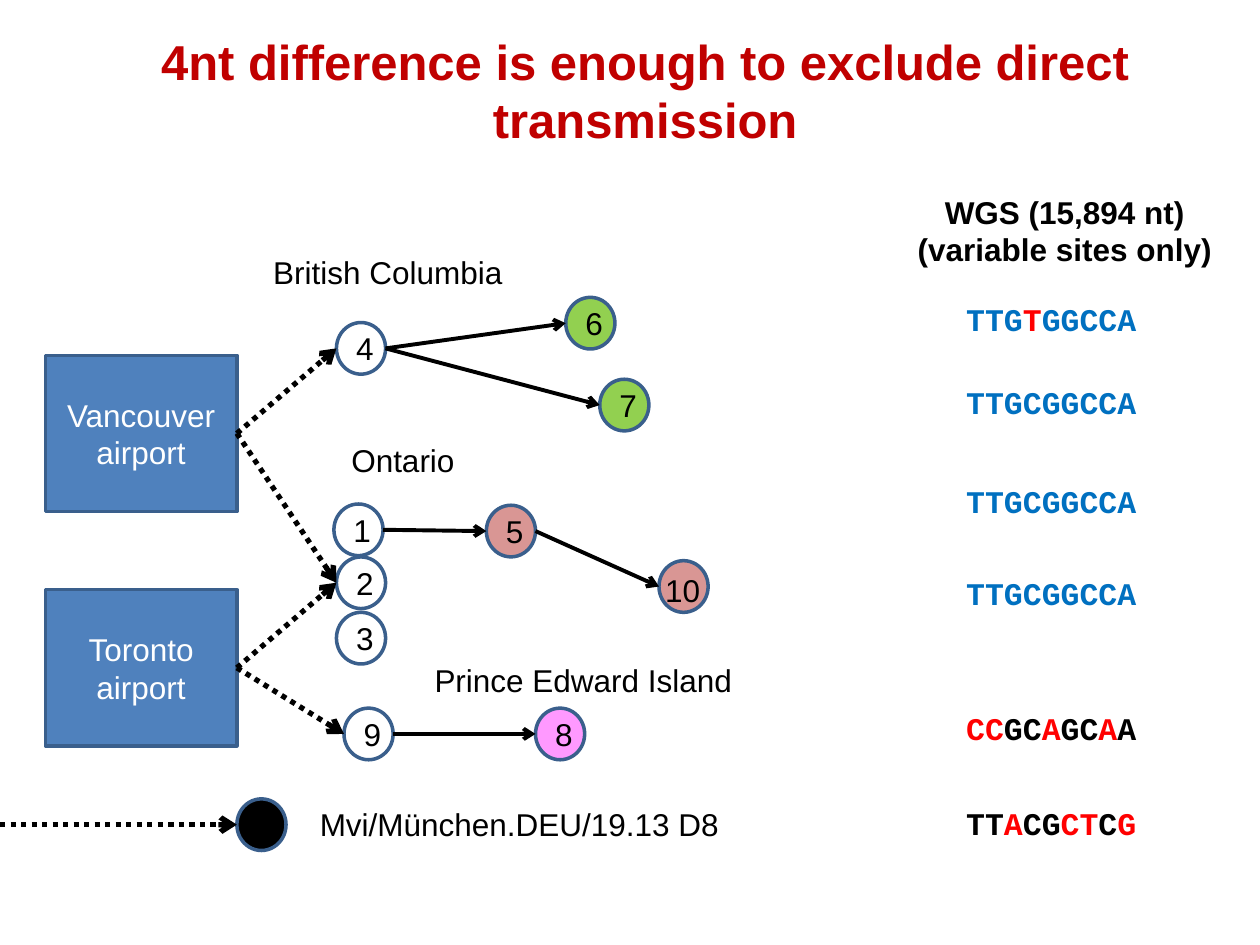
from lxml.etree import SubElement
from pptx import Presentation
from pptx.dml.color import RGBColor
from pptx.enum.dml import MSO_LINE
from pptx.enum.shapes import MSO_CONNECTOR, MSO_SHAPE
from pptx.enum.text import MSO_ANCHOR, PP_ALIGN
from pptx.oxml.ns import qn
from pptx.util import Inches, Pt

BLACK = RGBColor(0x00, 0x00, 0x00)
WHITE = RGBColor(0xFF, 0xFF, 0xFF)
CRIMSON = RGBColor(0xC0, 0x00, 0x00)
RED = RGBColor(0xFF, 0x00, 0x00)
BLUE = RGBColor(0x00, 0x70, 0xC0)
STEEL = RGBColor(0x4F, 0x81, 0xBD)
OUTLINE = RGBColor(0x3A, 0x5F, 0x8C)
GREEN = RGBColor(0x92, 0xD0, 0x50)
ROSE = RGBColor(0xD9, 0x96, 0x94)
PINK = RGBColor(0xFF, 0x99, 0xFF)

TITLE = "4nt difference is enough to exclude direct transmission"
SEQUENCE_HEADING = ["WGS (15,894 nt)", "(variable sites only)"]

AIRPORT_SIZE = (1.52, 1.24)
AIRPORTS = {
    "Vancouver airport": (0.36, 2.82),
    "Toronto airport": (0.36, 4.68),
}

CASE_SIZE = (0.39, 0.41)
REFERENCE = "reference"
CASES = {
    "1": (2.65, 4.0, WHITE),
    "2": (2.67, 4.42, WHITE),
    "3": (2.67, 4.86, WHITE),
    "5": (3.86, 4.01, ROSE),
    "10": (5.23, 4.45, ROSE),
    "4": (2.67, 2.56, WHITE),
    "6": (4.49, 2.36, GREEN),
    "7": (4.76, 3.01, GREEN),
    "9": (2.73, 5.62, WHITE),
    "8": (4.25, 5.62, PINK),
    REFERENCE: (1.88, 6.34, BLACK),
}
UNLABELLED_CASES = {"10", REFERENCE}

IMPORTATIONS = [
    ("Vancouver airport", "2"),
    ("Toronto airport", "2"),
    ("Toronto airport", "9"),
    ("Vancouver airport", "4"),
]
TRANSMISSIONS = [("9", "8"), ("1", "5"), ("5", "10"), ("4", "6"), ("4", "7")]

LABELS = [
    ("British Columbia", 2.07, 1.96, 2.04),
    ("Ontario", 2.69, 3.45, 1.03),
    ("Prince Edward Island", 3.35, 5.2, 2.59),
    ("Mvi/München.DEU/19.13 D8", 2.44, 6.34, 3.4),
    ("10", 5.18, 4.48, 0.48),
]

SEQUENCES = [
    (2.33, [("TTG", BLUE), ("T", RED), ("GGCCA", BLUE)]),
    (2.99, [("TTGCGGCCA", BLUE)]),
    (3.78, [("TTGCGGCCA", BLUE)]),
    (4.51, [("TTGCGGCCA", BLUE)]),
    (5.58, [("CC", RED), ("GC", BLACK), ("A", RED), ("GC", BLACK),
            ("A", RED), ("A", BLACK)]),
    (6.33, [("TT", BLACK), ("A", RED), ("CG", BLACK), ("CT", RED),
            ("C", BLACK), ("G", RED)]),
]


def set_font(font, color=None, size=18, name="Arial", bold=False):
    font.name, font.size, font.bold = name, Pt(size), bold
    if color is not None:
        font.color.rgb = color


def add_text(slide, lines, box, color=BLACK, wrap=False, align=PP_ALIGN.LEFT,
             anchor=MSO_ANCHOR.TOP, **style):
    frame = slide.shapes.add_textbox(*map(Inches, box)).text_frame
    frame.word_wrap, frame.vertical_anchor = wrap, anchor
    frame.text = "\n".join(lines)
    for paragraph in frame.paragraphs:
        paragraph.alignment = align
        set_font(paragraph.font, color, **style)


def add_sequence(slide, top, pieces):
    box = slide.shapes.add_textbox(*map(Inches, (7.57, top, 1.56, 0.4)))
    box.text_frame.word_wrap = False
    paragraph = box.text_frame.paragraphs[0]
    set_font(paragraph.font, name="Courier New", bold=True)
    for bases, color in pieces:
        run = paragraph.add_run()
        run.text = bases
        run.font.color.rgb = color


def add_node(slide, preset, box, fill, label="", color=BLACK):
    node = slide.shapes.add_shape(preset, *map(Inches, box))
    node.shadow.inherit = False
    node.fill.solid()
    node.fill.fore_color.rgb = fill
    node.line.color.rgb = OUTLINE
    node.line.width = Pt(2)
    if label:
        node.text_frame.text = label
        node.text_frame.vertical_anchor = MSO_ANCHOR.MIDDLE
        paragraph = node.text_frame.paragraphs[0]
        paragraph.alignment = PP_ALIGN.CENTER
        set_font(paragraph.font, color)
    return node


def left_side(node):
    return node.left, node.top + node.height // 2


def right_side(node):
    return node.left + node.width, node.top + node.height // 2


def add_arrow(slide, start, end, width, dash=None):
    arrow = slide.shapes.add_connector(MSO_CONNECTOR.STRAIGHT, *start, *end)
    arrow.line.color.rgb = BLACK
    arrow.line.width = Pt(width)
    if dash is not None:
        arrow.line.dash_style = dash
    SubElement(arrow.line._get_or_add_ln(), qn("a:tailEnd"), type="arrow")
    SubElement(arrow._element.spPr, qn("a:effectLst"))


def main():
    deck = Presentation()
    deck.slide_width, deck.slide_height = Inches(10), Inches(7.5)
    slide = deck.slides.add_slide(deck.slide_layouts[6])

    add_text(slide, [TITLE], (0.25, 0.5, 9.74, 0.73), CRIMSON, wrap=True,
             align=PP_ALIGN.CENTER, anchor=MSO_ANCHOR.BOTTOM, size=28, bold=True)

    nodes = {}
    for name, (left, top, fill) in CASES.items():
        label = "" if name in UNLABELLED_CASES else name
        nodes[name] = add_node(slide, MSO_SHAPE.OVAL, (left, top, *CASE_SIZE),
                               fill, label)
    for name, corner in AIRPORTS.items():
        nodes[name] = add_node(slide, MSO_SHAPE.RECTANGLE,
                               (*corner, *AIRPORT_SIZE), STEEL, name, WHITE)

    for source, target in IMPORTATIONS:
        add_arrow(slide, right_side(nodes[source]), left_side(nodes[target]),
                  3, MSO_LINE.ROUND_DOT)
    for source, target in TRANSMISSIONS:
        add_arrow(slide, right_side(nodes[source]), left_side(nodes[target]), 2.25)
    entry = left_side(nodes[REFERENCE])
    add_arrow(slide, (0, entry[1]), entry, 3, MSO_LINE.ROUND_DOT)

    for label, left, top, width in LABELS:
        add_text(slide, [label], (left, top, width, 0.4))
    add_text(slide, SEQUENCE_HEADING, (7.17, 1.48, 2.56, 0.71),
             align=PP_ALIGN.CENTER, bold=True)
    for top, pieces in SEQUENCES:
        add_sequence(slide, top, pieces)

    deck.save("out.pptx")


if __name__ == "__main__":
    main()
